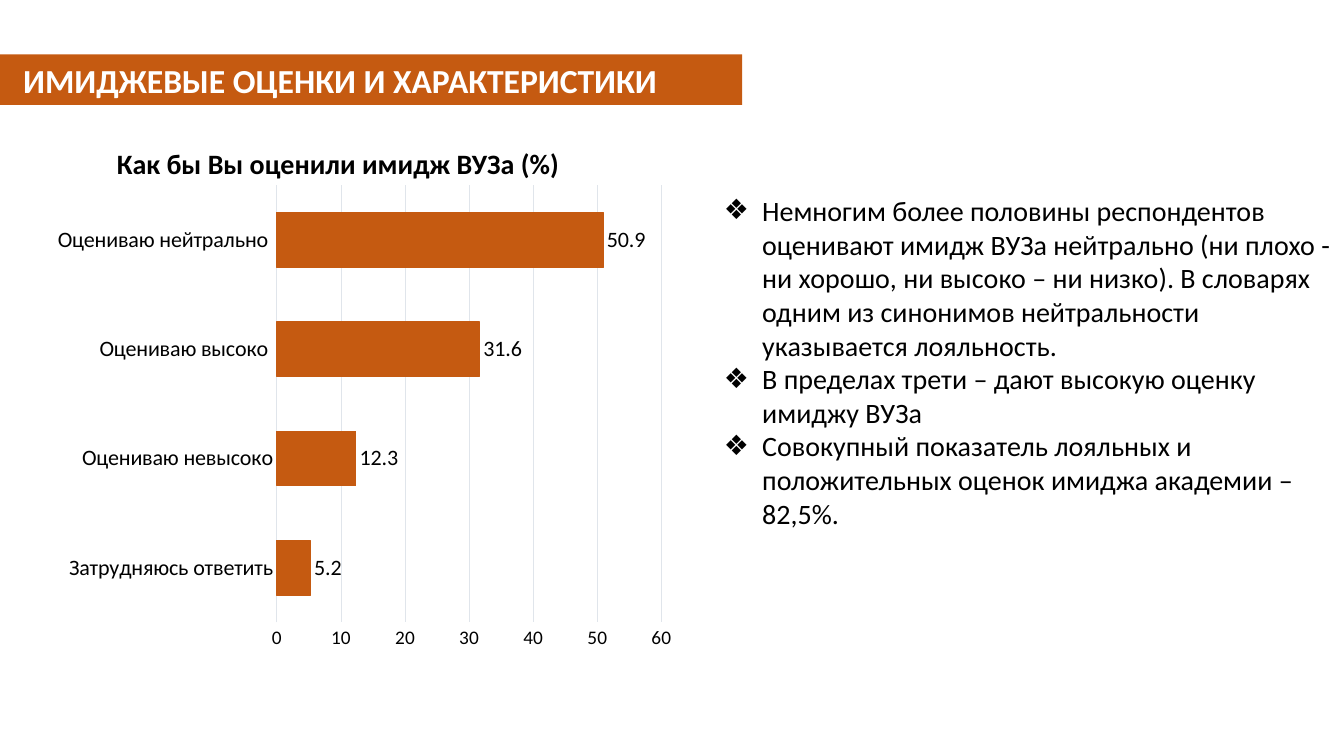
import pptx
import pptx.util
import pptx.chart.data
import pptx.dml.color
import pptx.enum.chart
import pptx.enum.text
import pptx.oxml
import pptx.oxml.ns

Inches, Pt = pptx.util.Inches, pptx.util.Pt
Tick, Anchor = pptx.enum.chart.XL_TICK_MARK, pptx.enum.text.MSO_ANCHOR

# Content
TITLE = "ИМИДЖЕВЫЕ ОЦЕНКИ И ХАРАКТЕРИСТИКИ"
HEADING = "Как бы Вы оценили имидж ВУЗа (%)"
POINTS = [
    "Немногим более половины респондентов оценивают имидж ВУЗа нейтрально "
    "(ни плохо - ни хорошо, ни высоко – ни низко). В словарях одним из "
    "синонимов нейтральности указывается лояльность.",
    "В пределах трети – дают высокую оценку имиджу ВУЗа",
    "Совокупный показатель лояльных и положительных оценок имиджа академии – 82,5%.",
]
RATINGS = {
    "Затрудняюсь ответить": 5.2,
    "Оцениваю невысоко": 12.3,
    "Оцениваю высоко ": 31.6,
    "Оцениваю нейтрально ": 50.9,
}
ORANGE, GRID, BLACK, WHITE = "C55A11", "E0E5EB", "000000", "FFFFFF"
PLOT = {"x": 0.38, "y": 0.03, "w": 0.62, "h": 0.93}
INDENT = Inches(0.38)


# Helpers
def paint(color, hue):
    color.rgb = pptx.dml.color.RGBColor.from_string(hue)


def apply(target, **values):
    for name, value in values.items():
        setattr(target, name, value)


def style(font, size, hue=BLACK, bold=False):
    apply(font, name="Calibri", size=Pt(size), bold=bold)
    paint(font.color, hue)


def rule(line, hue):
    line.width = Pt(0.75)
    paint(line.color, hue)


def place(shape, left, top, width, height):
    apply(shape, left=Inches(left), top=Inches(top),
          width=Inches(width), height=Inches(height))


def fit(frame, anchor, inset=0.1):
    apply(frame, word_wrap=True, vertical_anchor=anchor,
          auto_size=pptx.enum.text.MSO_AUTO_SIZE.NONE,
          margin_left=Inches(inset))


def node(tag, **attrs):
    space = pptx.oxml.ns.nsdecls(tag.split(":")[0])
    item = pptx.oxml.parse_xml(f"<{tag} {space}/>")
    for name, value in attrs.items():
        item.set(name, str(value))
    return item


deck = pptx.Presentation()
apply(deck, slide_width=Inches(13.33), slide_height=Inches(7.5))
slide = deck.slides.add_slide(deck.slide_layouts[1])

# Title band
title, body = slide.placeholders
place(title, 0, 0.54, 7.36, 0.5)
title.fill.solid()
paint(title.fill.fore_color, ORANGE)
fit(title.text_frame, Anchor.MIDDLE, 0.23)
title.text_frame.text = TITLE
line = title.text_frame.paragraphs[0]
line.alignment = pptx.enum.text.PP_ALIGN.LEFT
style(line.runs[0].font, 24, WHITE, True)

# Findings
place(body, 7.08, 1.87, 6.25, 4.19)
fit(body.text_frame, Anchor.TOP)
body.text_frame.text = "\n".join(POINTS)
for point in body.text_frame.paragraphs:
    apply(point, space_before=Pt(0), space_after=Pt(0))
    style(point.runs[0].font, 20)
    props = point._p.get_or_add_pPr()
    props.set("marL", str(INDENT))
    props.set("indent", str(-INDENT))
    props.append(node("a:buChar", char="❖"))

# Chart heading
head = slide.shapes.add_textbox(0, 0, 0, 0)
place(head, 1.06, 1.4, 4.62, 0.43)
fit(head.text_frame, Anchor.TOP)
head.text_frame.text = HEADING
style(head.text_frame.paragraphs[0].runs[0].font, 20, bold=True)

# Chart
data = pptx.chart.data.CategoryChartData(number_format="General")
data.categories = list(RATINGS)
data.add_series("Series 1", list(RATINGS.values()))
chart = slide.shapes.add_chart(
    pptx.enum.chart.XL_CHART_TYPE.BAR_CLUSTERED,
    Inches(0.41), Inches(1.7), Inches(6.25), Inches(4.75), data).chart
apply(chart, has_title=False, has_legend=False)
style(chart.font, 14)

# Bars and labels
bars = chart.plots[0]
apply(bars, gap_width=100, vary_by_categories=False, has_data_labels=True)
apply(bars.data_labels, show_value=True, number_format="General",
      number_format_is_linked=False,
      position=pptx.enum.chart.XL_LABEL_POSITION.OUTSIDE_END)
style(bars.data_labels.font, 16)
look = bars.series[0].format
look.fill.solid()
paint(look.fill.fore_color, ORANGE)
rule(look.line, ORANGE)

# Axes
cats, vals = chart.category_axis, chart.value_axis
for axis, size in ((cats, 16), (vals, 14)):
    apply(axis, major_tick_mark=Tick.NONE, minor_tick_mark=Tick.NONE)
    style(axis.tick_labels.font, size)
apply(vals, minimum_scale=0, maximum_scale=60, major_unit=10,
      has_major_gridlines=True)
rule(cats.format.line, GRID)
rule(vals.major_gridlines.format.line, GRID)
vals.format.line.fill.background()

# Plot area position
area = chart.element.find(".//" + pptx.oxml.ns.qn("c:plotArea"))
for old in area.findall(pptx.oxml.ns.qn("c:layout")):
    area.remove(old)
layout, manual = node("c:layout"), node("c:manualLayout")
manual.append(node("c:layoutTarget", val="inner"))
for side in "xy":
    manual.append(node(f"c:{side}Mode", val="edge"))
for side, share in PLOT.items():
    manual.append(node(f"c:{side}", val=share))
layout.append(manual)
area.insert(0, layout)

deck.save("out.pptx")
